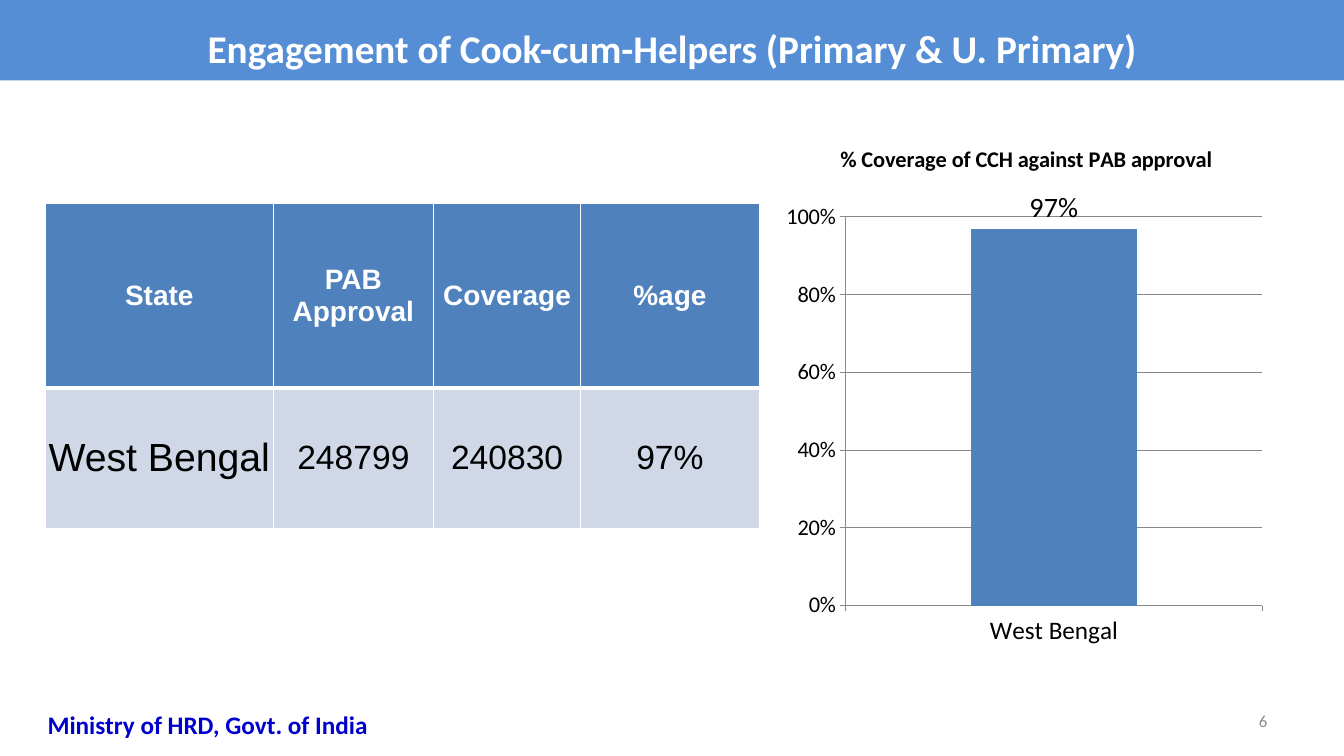
import dataclasses
import typing

import lxml.etree
import pptx
import pptx.chart.data
import pptx.dml.color
import pptx.enum.chart
import pptx.enum.text
import pptx.oxml.ns
import pptx.util

Inches = pptx.util.Inches
Pt = pptx.util.Pt
Align = pptx.enum.text.PP_ALIGN
Anchor = pptx.enum.text.MSO_ANCHOR
AutoSize = pptx.enum.text.MSO_AUTO_SIZE


@dataclasses.dataclass(frozen=True)
class Theme:
    banner: str = "558ED5"
    accent: str = "4F81BD"
    body_fill: str = "D0D8E8"
    white: str = "FFFFFF"
    black: str = "000000"
    grid: str = "878787"
    number: str = "8C8C8C"
    footer: str = "0000CC"
    heading_font: str = "Calibri"
    table_font: str = "Arial"
    title_size: int = 28
    header_size: int = 20
    state_size: int = 28
    value_size: int = 24
    label_size: int = 20
    text_size: int = 18
    axis_size: int = 16
    number_size: int = 12


THEME = Theme()


class Box(typing.NamedTuple):
    left: float
    top: float
    width: float
    height: float

    def emu(self) -> tuple:
        return tuple(Inches(v) for v in self)


class Column(typing.NamedTuple):
    header: str
    value: str
    width: float
    size: int = THEME.value_size


class Label(typing.NamedTuple):
    text: str
    box: Box
    size: int
    color: str
    bold: bool
    align: Align
    anchor: Anchor
    auto_size: AutoSize


COLUMNS = [
    Column("State", "West Bengal", 2.26, THEME.state_size),
    Column("PAB Approval", "248799", 1.59),
    Column("Coverage", "240830", 1.46),
    Column("%age", "97%", 1.77),
]
ROW_HEIGHTS = [1.83, 1.39]
LABELS = [
    Label("6", Box(9.56, 6.95, 3.11, 0.4), THEME.number_size, THEME.number,
          False, Align.RIGHT, Anchor.MIDDLE, AutoSize.NONE),
    Label("Ministry of HRD, Govt. of India", Box(0.1, 6.99, 3.92, 0.4), THEME.text_size,
          THEME.footer, True, Align.CENTER, Anchor.TOP, AutoSize.SHAPE_TO_FIT_TEXT),
]


def rgb(color: str) -> pptx.dml.color.RGBColor:
    return pptx.dml.color.RGBColor.from_string(color)


def set_font(font, size: int, color: str = THEME.black, bold: bool = False,
             name: str = THEME.heading_font) -> None:
    font.size = Pt(size)
    font.name = name
    font.bold = bold
    font.color.rgb = rgb(color)


def write(tf, text: str, *, align=Align.CENTER, spacing: float = 1.0, **font) -> None:
    tf.word_wrap = True
    p = tf.paragraphs[0]
    p.alignment = align
    p.line_spacing = spacing
    r = p.add_run()
    r.text = text
    set_font(r.font, **font)


def add_title(slide, text: str, box: Box) -> None:
    sp = slide.shapes.title
    sp.left, sp.top, sp.width, sp.height = box.emu()
    sp.fill.solid()
    sp.fill.fore_color.rgb = rgb(THEME.banner)
    tf = sp.text_frame
    tf.vertical_anchor = Anchor.MIDDLE
    tf.auto_size = AutoSize.SHAPE_TO_FIT_TEXT
    write(tf, text, spacing=1.4, size=THEME.title_size, color=THEME.white, bold=True)


def add_label(slide, label: Label) -> None:
    tf = slide.shapes.add_textbox(*label.box.emu()).text_frame
    tf.vertical_anchor = label.anchor
    write(tf, label.text, align=label.align, size=label.size,
          color=label.color, bold=label.bold)
    tf.auto_size = label.auto_size


def set_borders(cell, widths: dict[str, int]) -> None:
    qn = pptx.oxml.ns.qn
    tc_pr = cell._tc.get_or_add_tcPr()
    for i, (side, width) in enumerate(widths.items()):
        ln = lxml.etree.Element(qn(f"a:ln{side}"), w=str(Pt(width)))
        fill = lxml.etree.SubElement(ln, qn("a:solidFill"))
        lxml.etree.SubElement(fill, qn("a:srgbClr"), val=THEME.white)
        tc_pr.insert(i, ln)


def format_cell(cell, text: str, fill: str, borders: dict[str, int], **font) -> None:
    cell.margin_left = cell.margin_right = cell.margin_top = cell.margin_bottom = 0
    cell.vertical_anchor = Anchor.MIDDLE
    cell.fill.solid()
    cell.fill.fore_color.rgb = rgb(fill)
    write(cell.text_frame, text, name=THEME.table_font, **font)
    set_borders(cell, borders)


def add_coverage_table(slide, left: float, top: float) -> None:
    box = Box(left, top, sum(c.width for c in COLUMNS), sum(ROW_HEIGHTS))
    table = slide.shapes.add_table(len(ROW_HEIGHTS), len(COLUMNS), *box.emu()).table
    for row, height in zip(table.rows, ROW_HEIGHTS):
        row.height = Inches(height)
    thin = dict.fromkeys("LRTB", 1)
    for i, column in enumerate(COLUMNS):
        table.columns[i].width = Inches(column.width)
        format_cell(table.cell(0, i), column.header, THEME.accent, thin | {"B": 3},
                    size=THEME.header_size, color=THEME.white, bold=True)
        format_cell(table.cell(1, i), column.value, THEME.body_fill, thin | {"T": 3},
                    size=column.size)


def set_plot_layout(chart, box: Box) -> None:
    qn = pptx.oxml.ns.qn
    plot_area = chart._chartSpace.chart.plotArea
    for old in plot_area.findall(qn("c:layout")):
        plot_area.remove(old)
    layout = lxml.etree.Element(qn("c:layout"))
    manual = lxml.etree.SubElement(layout, qn("c:manualLayout"))
    settings = {"layoutTarget": "inner", "xMode": "edge", "yMode": "edge",
                "x": box.left, "y": box.top, "w": box.width, "h": box.height}
    for tag, value in settings.items():
        lxml.etree.SubElement(manual, qn(f"c:{tag}"), val=str(value))
    plot_area.insert(0, layout)


def add_coverage_chart(slide, box: Box) -> None:
    data = pptx.chart.data.CategoryChartData(number_format="0%")
    data.categories = ["West Bengal"]
    data.add_series("Series 1", [0.97])
    kind = pptx.enum.chart.XL_CHART_TYPE.COLUMN_CLUSTERED
    chart = slide.shapes.add_chart(kind, *box.emu(), data).chart
    set_font(chart.font, THEME.text_size)
    chart.has_legend = False
    write(chart.chart_title.text_frame, "% Coverage of CCH against PAB approval",
          size=THEME.axis_size, bold=True)
    chart.chart_title.include_in_layout = False

    plot = chart.plots[0]
    plot.vary_by_categories = False
    plot.gap_width = 150
    fill = plot.series[0].format.fill
    fill.solid()
    fill.fore_color.rgb = rgb(THEME.accent)
    plot.has_data_labels = True
    labels = plot.data_labels
    labels.show_value = True
    labels.number_format = "0%"
    labels.number_format_is_linked = False
    labels.position = pptx.enum.chart.XL_LABEL_POSITION.OUTSIDE_END
    set_font(labels.font, THEME.label_size)

    values = chart.value_axis
    values.minimum_scale, values.maximum_scale, values.major_unit = 0, 1, 0.2
    values.has_major_gridlines = True
    values.tick_labels.number_format = "0%"
    values.tick_labels.number_format_is_linked = False
    for axis, size in ((chart.category_axis, THEME.text_size), (values, THEME.axis_size)):
        axis.major_tick_mark = pptx.enum.chart.XL_TICK_MARK.OUTSIDE
        set_font(axis.tick_labels.font, size)
    for part in (chart.category_axis, values, values.major_gridlines):
        part.format.line.color.rgb = rgb(THEME.grid)
        part.format.line.width = Pt(0.75)
    set_plot_layout(chart, Box(0.14, 0.17, 0.83, 0.71))


def main() -> None:
    prs = pptx.Presentation()
    prs.slide_width, prs.slide_height = Inches(13.33), Inches(7.5)
    slide = prs.slides.add_slide(prs.slide_layouts.get_by_name("Title Only"))
    add_title(slide, "Engagement of Cook-cum-Helpers (Primary & U. Primary)",
              Box(0, 0.03, 13.33, 0.7))
    add_coverage_table(slide, 0.45, 2.02)
    add_coverage_chart(slide, Box(7.69, 1.23, 4.98, 5.43))
    for label in LABELS:
        add_label(slide, label)
    prs.save("out.pptx")


if __name__ == "__main__":
    main()
